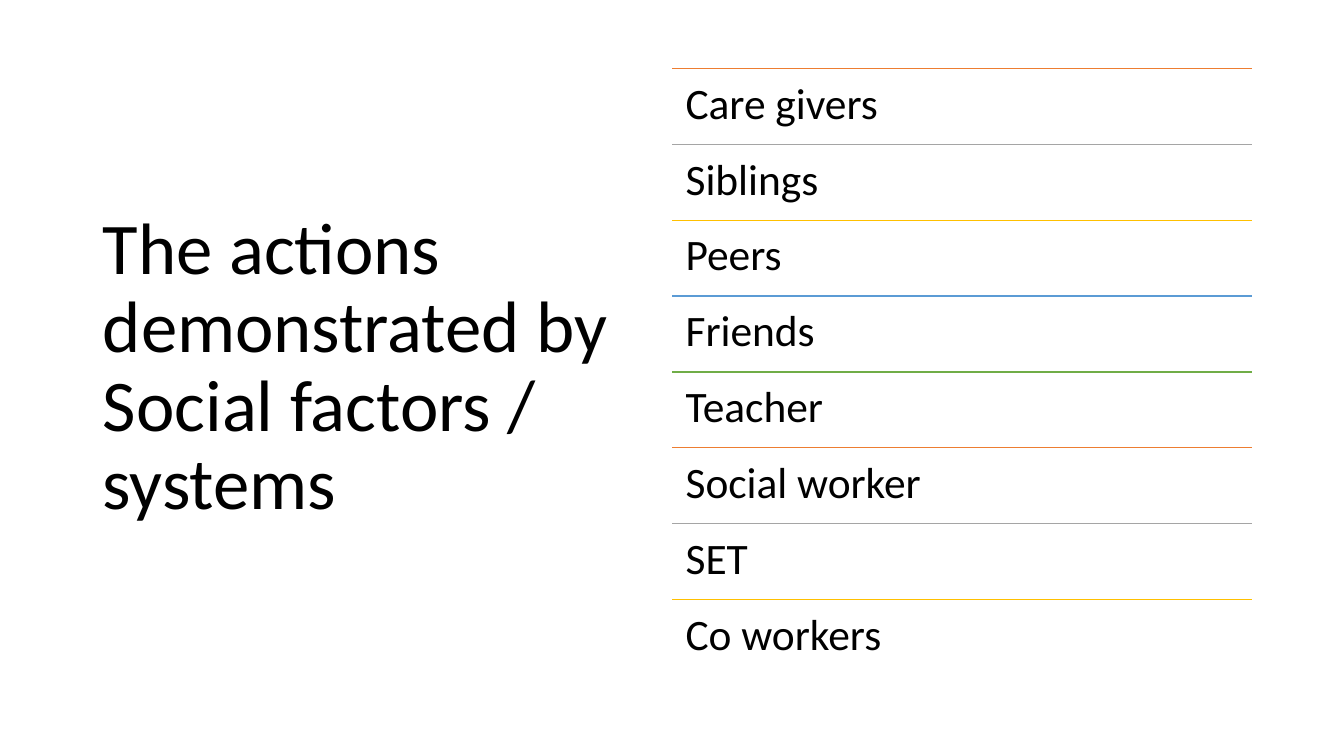
from pptx import Presentation
from pptx import util as u
from pptx.dml.color import RGBColor
from pptx.enum import shapes, text
from pptx.oxml.ns import qn
from lxml import etree

COLORS = {
    "text": "000000",
    "orange": "ED7D31",
    "gray": "A5A5A5",
    "gold": "FFC000",
    "blue": "5B9BD5",
    "green": "70AD47",
}
RULE_CYCLE = ["orange", "gray", "gold", "blue", "green"]
FACTORS = ["Care givers", "Siblings", "Peers", "Friends",
           "Teacher", "Social worker", "SET", "Co workers"]


def format_paragraph(paragraph, size):
    paragraph.line_spacing = 0.9
    paragraph.alignment = text.PP_ALIGN.LEFT
    for run in paragraph.runs:
        run.font.name = "Calibri"
        run.font.size = u.Pt(size)
        run.font.color.rgb = RGBColor.from_string(COLORS["text"])


presentation = Presentation()
presentation.slide_width = u.Inches(13.33)
presentation.slide_height = u.Inches(7.5)
slide = presentation.slides.add_slide(presentation.slide_layouts[5])

# Title on the left
title = slide.shapes.title
title.left, title.top = u.Inches(0.92), u.Inches(0.61)
title.width, title.height = u.Inches(5.32), u.Inches(6.09)
title.text_frame.text = "The actions demonstrated by Social factors / systems"
title.text_frame.word_wrap = True
title.text_frame.auto_size = text.MSO_AUTO_SIZE.NONE
title.text_frame.vertical_anchor = text.MSO_ANCHOR.MIDDLE
format_paragraph(title.text_frame.paragraphs[0], 52)

# List on the right: equal rows, each under a coloured rule
list_left, list_top = u.Inches(6.67), u.Inches(0.68)
list_width = u.Inches(5.75)
row_height = u.Inches(6.02) // len(FACTORS)

for row, factor in enumerate(FACTORS):
    top = list_top + row * row_height

    rule = slide.shapes.add_connector(
        shapes.MSO_CONNECTOR.STRAIGHT, list_left, top, list_left + list_width, top)
    rule_color = COLORS[RULE_CYCLE[row % len(RULE_CYCLE)]]
    rule.line.color.rgb = RGBColor.from_string(rule_color)
    rule.line.width = u.Pt(1)
    etree.SubElement(rule.line._get_or_add_ln().getparent(), qn("a:effectLst"))

    label = slide.shapes.add_textbox(list_left, top, list_width, row_height)
    frame = label.text_frame
    frame.word_wrap = True
    frame.vertical_anchor = text.MSO_ANCHOR.TOP
    frame.margin_left = frame.margin_right = u.Inches(0.13)
    frame.margin_top = frame.margin_bottom = u.Inches(0.13)
    frame.text = factor
    format_paragraph(frame.paragraphs[0], 31)

presentation.save("out.pptx")
